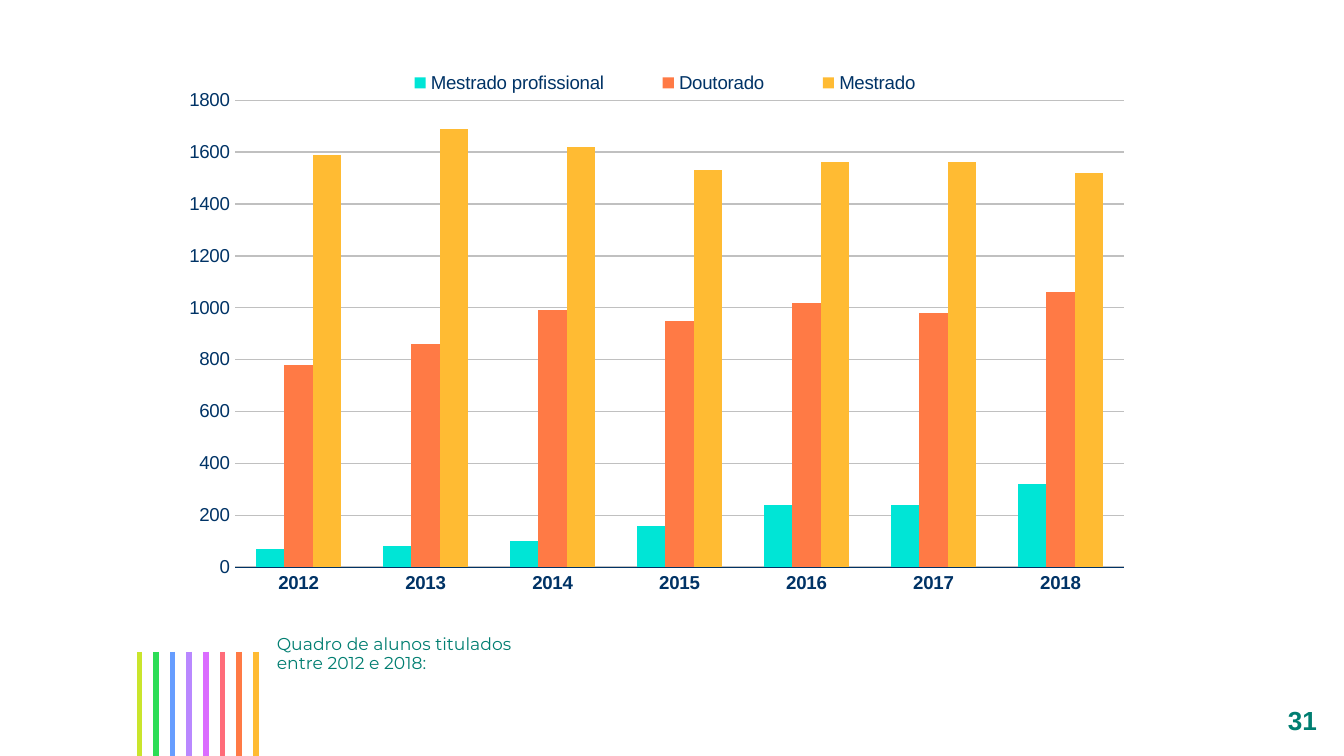
import pptx
import pptx.chart.data
import pptx.dml.color
import pptx.enum.chart
import pptx.enum.shapes
import pptx.enum.text
import pptx.oxml
import pptx.oxml.ns
import pptx.util
from pptx.util import Pt


def color(hex_code):
    return pptx.dml.color.RGBColor.from_string(hex_code)


def set_layout(element, following, **fractions):
    """Place a chart part by fractions of the chart, ahead of the first following tag."""
    target = '<c:layoutTarget val="inner"/>' if element.tag.endswith("plotArea") else ""
    modes = '<c:xMode val="edge"/><c:yMode val="edge"/>'
    values = "".join(f'<c:{key} val="{value}"/>' for key, value in fractions.items())
    namespace = pptx.oxml.ns.nsdecls("c")
    layout = pptx.oxml.parse_xml(
        f"<c:layout {namespace}><c:manualLayout>{target}{modes}{values}"
        "</c:manualLayout></c:layout>"
    )
    for old in element.findall(pptx.oxml.ns.qn("c:layout")):
        element.remove(old)
    element.find(pptx.oxml.ns.qn(following)).addprevious(layout)


NAVY, GREEN, WHITE = "003366", "007E71", "FFFFFF"

deck = pptx.Presentation()
deck.slide_width, deck.slide_height = Pt(720), Pt(405)
slide = deck.slides.add_slide(deck.slide_layouts[6])

# Coloured stripes at the foot
stripe_colors = ["CAE52C", "2CDD56", "669DFF", "B988FF",
                 "DB6CFF", "FF6C7A", "FF7A45", "FFBB33"]
for index, stripe_color in enumerate(stripe_colors):
    x = Pt(74.7 + 8.9 * index)
    stripe = slide.shapes.add_connector(
        pptx.enum.shapes.MSO_CONNECTOR.STRAIGHT, x, Pt(349.2), x, Pt(405))
    stripe.line.color.rgb = color(stripe_color)
    stripe.line.width = Pt(3)
    stripe._element.spPr.append(
        pptx.oxml.parse_xml(f'<a:effectLst {pptx.oxml.ns.nsdecls("a")}/>'))

# Page number
page_number = slide.shapes.add_shape(
    pptx.enum.shapes.MSO_SHAPE.RECTANGLE, Pt(675.4), Pt(367), Pt(44.6), Pt(38))
page_number.shadow.inherit = False
page_number.fill.solid()
page_number.fill.fore_color.rgb = color(WHITE)
page_number.line.fill.background()

# Caption
caption = slide.shapes.add_textbox(Pt(148.3), Pt(340.6), Pt(126.7), Pt(47.5))

frame_formats = [
    (page_number, "31", "Arial", 14, True, {
        "margin_left": Pt(7.2), "margin_right": Pt(7.2),
        "margin_top": Pt(7.2), "margin_bottom": Pt(7.2),
        "vertical_anchor": pptx.enum.text.MSO_ANCHOR.MIDDLE},
     {"alignment": pptx.enum.text.PP_ALIGN.CENTER}),
    (caption, "Quadro de alunos titulados entre 2012 e 2018:", "Montserrat", 9.2, False, {
        "margin_left": 0, "margin_right": 0,
        "margin_top": 0, "margin_bottom": Pt(7.2),
        "vertical_anchor": pptx.enum.text.MSO_ANCHOR.TOP},
     {"line_spacing": 0.9, "space_after": Pt(10)}),
]
for holder, wording, font_name, size, bold, frame_format, paragraph_format in frame_formats:
    frame = holder.text_frame
    frame.word_wrap = True
    frame.text = wording
    paragraph = frame.paragraphs[0]
    for name, value in frame_format.items():
        setattr(frame, name, value)
    for name, value in paragraph_format.items():
        setattr(paragraph, name, value)
    for name, value in {"name": font_name, "size": Pt(size), "bold": bold}.items():
        setattr(paragraph.font, name, value)
    paragraph.font.color.rgb = color(GREEN)

# Graduates per year
graduates = {
    "Mestrado profissional": ("00E5D6", [70, 80, 100, 160, 240, 240, 320]),
    "Doutorado": ("FF7A45", [780, 860, 990, 950, 1020, 980, 1060]),
    "Mestrado": ("FFBB33", [1590, 1690, 1620, 1530, 1560, 1560, 1520]),
}
chart_data = pptx.chart.data.CategoryChartData()
chart_data.categories = [str(year) for year in range(2012, 2019)]
for degree, (_, counts) in graduates.items():
    chart_data.add_series(degree, counts)
chart = slide.shapes.add_chart(
    pptx.enum.chart.XL_CHART_TYPE.COLUMN_CLUSTERED,
    Pt(89.3), Pt(25.9), Pt(523.4), Pt(308.9), chart_data).chart

chart.has_title = False
chart.has_legend = True
chart.legend.position = pptx.enum.chart.XL_LEGEND_POSITION.TOP
chart.legend.include_in_layout = False

plot = chart.plots[0]
plot.gap_width = 150
plot.overlap = 0
plot.vary_by_categories = False
for series, (bar_color, _) in zip(plot.series, graduates.values()):
    series.format.fill.solid()
    series.format.fill.fore_color.rgb = color(bar_color)
    series.invert_if_negative = False

years, counts_axis = chart.category_axis, chart.value_axis
for axis in (years, counts_axis):
    axis.has_title = False
    axis.major_tick_mark = pptx.enum.chart.XL_TICK_MARK.NONE
    axis.minor_tick_mark = pptx.enum.chart.XL_TICK_MARK.NONE
for name, value in {"minimum_scale": 0, "maximum_scale": 1800, "major_unit": 200,
                    "has_major_gridlines": True}.items():
    setattr(counts_axis, name, value)
counts_axis.format.line.fill.background()
for line, line_color, width in [
    (years.format.line, NAVY, 0.25),
    (counts_axis.major_gridlines.format.line, "C0C0C0", 0.75),
]:
    line.color.rgb = color(line_color)
    line.width = Pt(width)

for font, bold in [(chart.font, False), (chart.legend.font, False),
                   (years.tick_labels.font, True), (counts_axis.tick_labels.font, False)]:
    for name, value in {"name": "Arial", "size": Pt(10), "bold": bold}.items():
        setattr(font, name, value)
    font.color.rgb = color(NAVY)

plot_area = chart._chartSpace.chart.plotArea
set_layout(plot_area, "c:barChart", x=0.07, y=0.09, w=0.91, h=0.81)
set_layout(chart.legend._element, "c:overlay", x=0.2, y=0.04, w=0.62, h=0.04)

deck.save("out.pptx")
